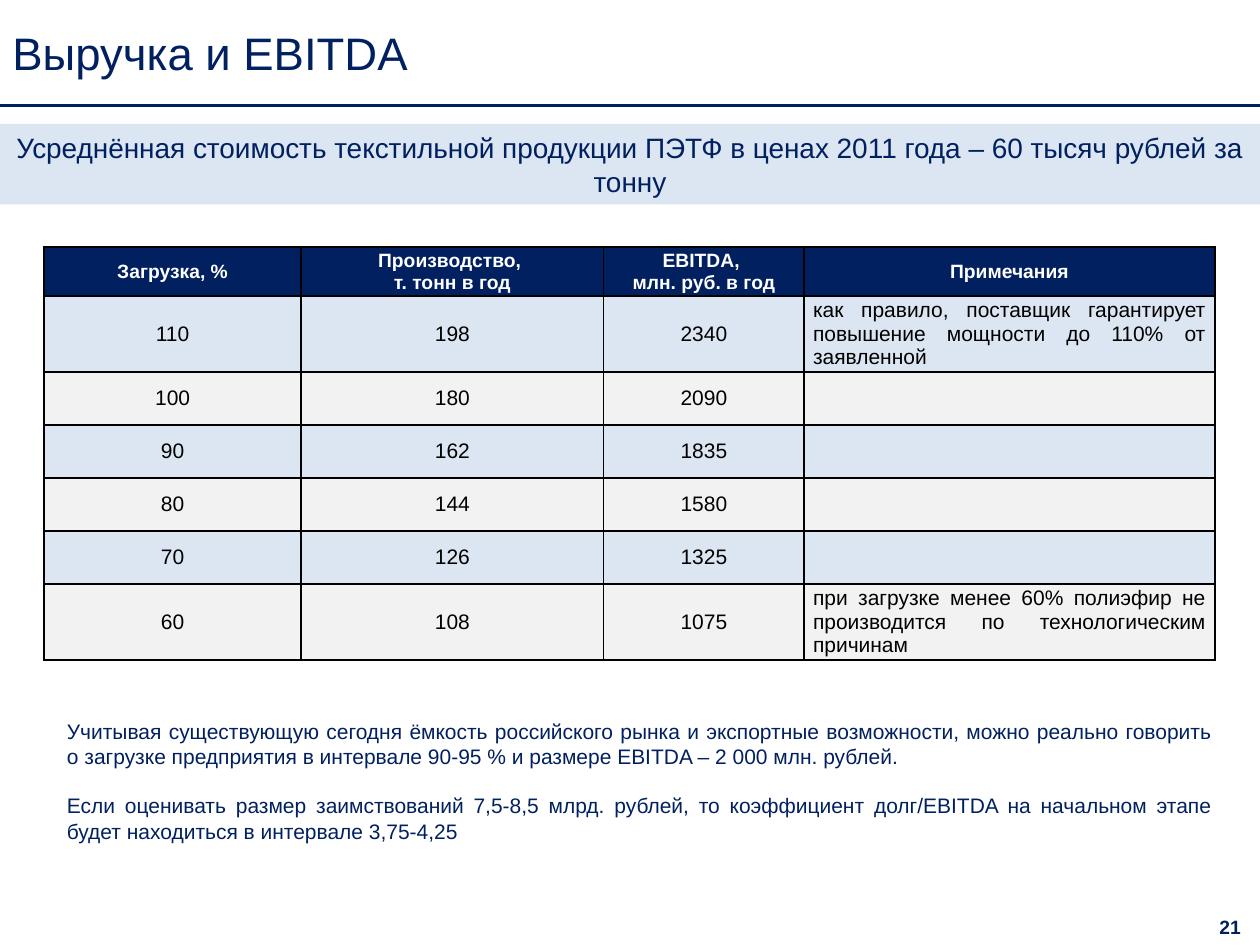
import dataclasses

import lxml.etree
import pptx
import pptx.dml.color
import pptx.enum.shapes
import pptx.enum.text
import pptx.oxml.ns
import pptx.util

Cm = pptx.util.Cm
Pt = pptx.util.Pt
ALIGN = pptx.enum.text.PP_ALIGN
ANCHOR = pptx.enum.text.MSO_ANCHOR
qn = pptx.oxml.ns.qn


@dataclasses.dataclass(frozen=True)
class Theme:
    """Colours, font and type sizes of the slide."""
    navy: str = "002060"
    pale_blue: str = "DCE6F2"
    pale_grey: str = "F2F2F2"
    white: str = "FFFFFF"
    black: str = "000000"
    font: str = "Arial"
    title: int = 26
    banner: int = 16
    body: int = 12
    small: int = 11


THEME = Theme()

HEADINGS = [
    ["Загрузка, %"],
    ["Производство, ", "т. тонн в год"],
    ["EBITDA, ", "млн. руб. в год"],
    ["Примечания"],
]
LOADS = [
    ("110", "198", "2340", "как правило, поставщик гарантирует повышение мощности до 110% от заявленной"),
    ("100", "180", "2090", ""),
    ("90", "162", "1835", ""),
    ("80", "144", "1580", ""),
    ("70", "126", "1325", ""),
    ("60", "108", "1075", "при загрузке менее 60% полиэфир не производится по технологическим причинам"),
]
CONCLUSIONS = [
    "Учитывая существующую сегодня ёмкость российского рынка и экспортные возможности, "
    "можно реально говорить о загрузке предприятия в интервале 90-95 % и размере EBITDA – 2 000 млн. рублей.",
    "Если оценивать размер заимствований 7,5-8,5 млрд. рублей, то коэффициент долг/EBITDA "
    "на начальном этапе будет находиться в интервале 3,75-4,25",
]


def rgb(value):
    """Return a colour object for a hex value."""
    return pptx.dml.color.RGBColor.from_string(value)


def paint(target, colour):
    """Fill a shape or cell with one colour."""
    target.fill.solid()
    target.fill.fore_color.rgb = rgb(colour)


def write(frame, lines, size, colour=THEME.navy, align=ALIGN.LEFT, bold=False, gap=0):
    """Write each line as a paragraph, with a gap between paragraphs."""
    frame.word_wrap = True
    for index, line in enumerate(lines):
        paragraph = frame.add_paragraph() if index else frame.paragraphs[0]
        paragraph.alignment = align
        paragraph.space_before = Pt(gap if index else 0)
        run = paragraph.add_run()
        run.text = line
        run.font.name = THEME.font
        run.font.size = Pt(size)
        run.font.bold = bold
        run.font.color.rgb = rgb(colour)


def add_text(slide, box, lines, size, anchor=ANCHOR.MIDDLE, **style):
    """Place a text box with styled lines."""
    frame = slide.shapes.add_textbox(*map(Cm, box)).text_frame
    frame.vertical_anchor = anchor
    write(frame, lines, size, **style)


def add_title(slide, box):
    """Place the title with a rule along the bottom of its box."""
    left, top, width, height = box
    bottom = Cm(top + height)
    rule = slide.shapes.add_connector(
        pptx.enum.shapes.MSO_CONNECTOR.STRAIGHT, Cm(left), bottom, Cm(left + width), bottom)
    rule.line.color.rgb = rgb(THEME.navy)
    rule.line.width = Pt(2)
    lxml.etree.SubElement(rule._element.spPr, qn("a:effectLst"))
    add_text(slide, box, ["Выручка и EBITDA"], THEME.title)


def add_banner(slide, box):
    """Place the price statement on a full-width band."""
    band = slide.shapes.add_shape(pptx.enum.shapes.MSO_SHAPE.RECTANGLE, *map(Cm, box))
    band.shadow.inherit = False
    band.line.fill.background()
    paint(band, THEME.pale_blue)
    band.text_frame.vertical_anchor = ANCHOR.MIDDLE
    write(band.text_frame,
          ["Усреднённая стоимость текстильной продукции ПЭТФ в ценах 2011 года – 60 тысяч рублей за тонну"],
          THEME.banner, align=ALIGN.CENTER)


def style_cell(cell, fill):
    """Give a cell its margins, thin borders and fill."""
    cell.margin_left = cell.margin_right = Cm(0.18)
    cell.margin_top = cell.margin_bottom = 0
    cell.vertical_anchor = ANCHOR.MIDDLE
    properties = cell._tc.get_or_add_tcPr()
    for side in ("a:lnL", "a:lnR", "a:lnT", "a:lnB"):
        border = lxml.etree.SubElement(properties, qn(side), w=str(Pt(1)))
        solid = lxml.etree.SubElement(border, qn("a:solidFill"))
        lxml.etree.SubElement(solid, qn("a:srgbClr"), val=THEME.black)
    paint(cell, fill)


def add_load_table(slide, box):
    """Place the table of output and EBITDA by plant load."""
    widths = [5.18, 6.1, 4.04, 8.28]
    heights = [0.99] + [1.52 if note else 1.07 for *_, note in LOADS]
    table = slide.shapes.add_table(len(heights), len(widths), *map(Cm, box)).table
    table.horz_banding = False
    for column, width in zip(table.columns, widths):
        column.width = Cm(width)
    for row, height in zip(table.rows, heights):
        row.height = Cm(height)
    for cell, lines in zip(table.rows[0].cells, HEADINGS):
        style_cell(cell, THEME.navy)
        write(cell.text_frame, lines, THEME.small, THEME.white, ALIGN.CENTER, True)
    for index, load in enumerate(LOADS):
        fill = THEME.pale_grey if index % 2 else THEME.pale_blue
        for column, value in enumerate(load):
            cell = table.cell(index + 1, column)
            style_cell(cell, fill)
            if value:
                align = ALIGN.JUSTIFY if column == 3 else ALIGN.CENTER
                write(cell.text_frame, [value], THEME.body, THEME.black, align)


def add_conclusions(slide, box):
    """Place the justified concluding paragraphs."""
    add_text(slide, box, CONCLUSIONS, THEME.body, align=ALIGN.JUSTIFY, gap=14)


def add_page_number(slide, box):
    """Place the page number."""
    add_text(slide, box, ["21"], THEME.small, ANCHOR.TOP, align=ALIGN.CENTER, bold=True)


def main():
    """Build and save the slide."""
    deck = pptx.Presentation()
    deck.slide_width, deck.slide_height = Cm(25.4), Cm(19.05)
    slide = deck.slides.add_slide(deck.slide_layouts[6])
    add_title(slide, (0, 0, 25.4, 2.13))
    add_load_table(slide, (0.89, 4.98, 23.6, 8.36))
    add_banner(slide, (0, 2.5, 25.4, 1.62))
    add_conclusions(slide, (1.1, 14.33, 23.6, 2.82))
    add_page_number(slide, (24.2, 18.33, 1.2, 0.72))
    deck.save("out.pptx")


if __name__ == "__main__":
    main()
